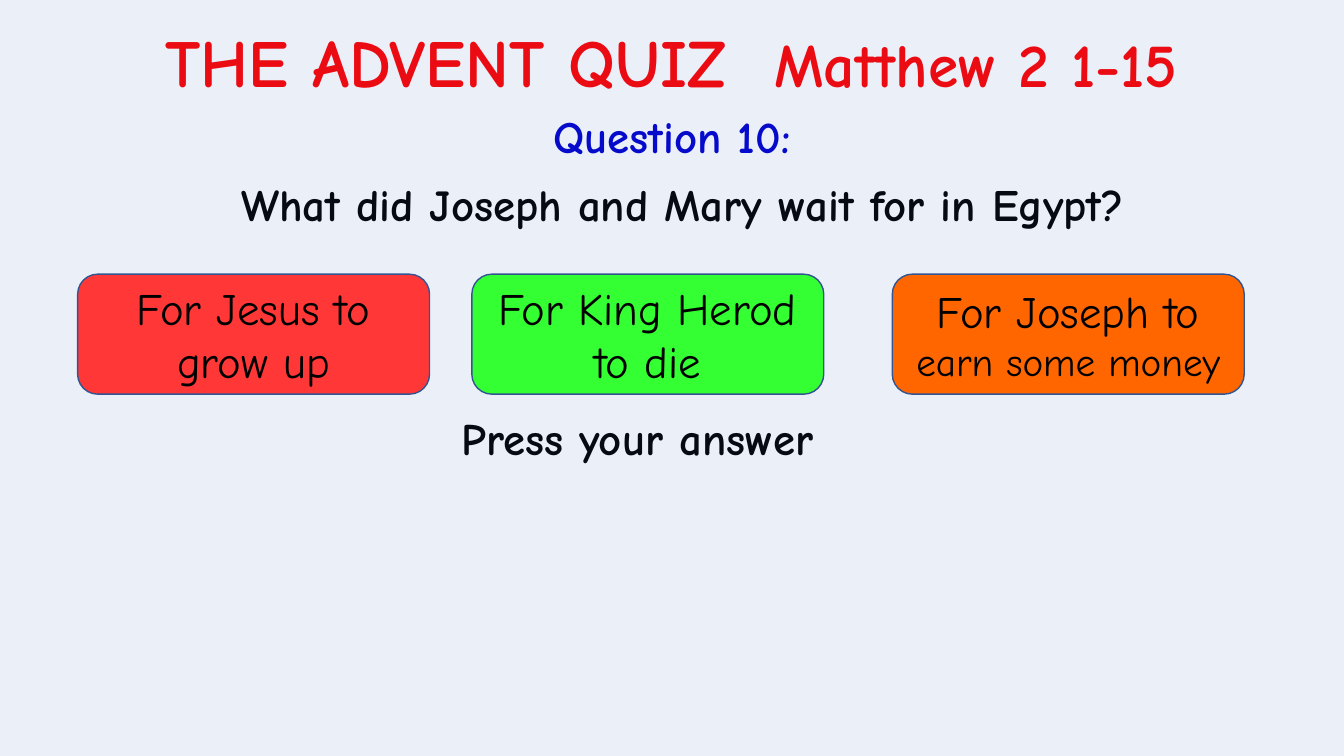
from lxml.etree import SubElement
from pptx import Presentation
from pptx.dml.color import RGBColor
from pptx.enum.shapes import MSO_SHAPE
from pptx.enum.text import MSO_ANCHOR, PP_ALIGN
from pptx.oxml.ns import qn
from pptx.util import Inches, Pt

WIDTH, HEIGHT = 13.33, 7.5
FONT = "Comic Neue"
ANSWER_TOP, ANSWER_WIDTH, ANSWER_HEIGHT = 2.72, 3.49, 1.19
ANSWERS = [
    (0.77, "FF3737", [("For Jesus to grow up", 32)]),
    (4.68, "33FF33", [("For King Herod to die", 32)]),
    (8.85, "FF6600", [("For Joseph to ", 32), ("earn some money", 28)]),
]


def color(value):
    return RGBColor.from_string(value)


def write(frame, pieces, ink="000000", bold=False, **layout):
    """Fill a text frame with one paragraph of (text, size) pieces."""
    frame.word_wrap = True
    para = frame.paragraphs[0]
    for name, value in ({"alignment": PP_ALIGN.CENTER} | layout).items():
        setattr(para, name, value)
    for text, size in pieces:
        span = para.add_run()
        span.text = text
        for name, value in {"name": FONT, "size": Pt(size), "bold": bold}.items():
            setattr(span.font, name, value)
        span.font.color.rgb = color(ink)


def add_line(page, box, pieces, ink="000000", **layout):
    text_box = page.shapes.add_textbox(*map(Inches, box))
    write(text_box.text_frame, pieces, ink, bold=True, **layout)


def add_panel(page, kind, box, fill):
    panel = page.shapes.add_shape(kind, *map(Inches, box))
    panel.shadow.inherit = False
    panel.fill.solid()
    panel.fill.fore_color.rgb = color(fill)
    return panel


def add_wash(page, box):
    """Lay a pale blue tint over the given box."""
    wash = add_panel(page, MSO_SHAPE.RECTANGLE, box, "4472C4")
    wash.line.fill.background()
    tint = wash.fill._xPr.find(".//" + qn("a:srgbClr"))
    SubElement(tint, qn("a:alpha"), val="10000")


def add_answer(page, box, fill, pieces):
    button = add_panel(page, MSO_SHAPE.ROUNDED_RECTANGLE, box, fill)
    button.line.color.rgb = color("325491")
    button.line.width = Pt(1)
    button.text_frame.vertical_anchor = MSO_ANCHOR.MIDDLE
    write(button.text_frame, pieces)


def build_quiz_page(page):
    # Headings
    add_line(page, (0.37, 0.15, 12.58, 0.91),
             [("THE ADVENT QUIZ  ", 48), ("Matthew 2 1-15", 44)], "FF0000")
    add_line(page, (4.46, 1.03, 4.41, 0.64), [("Question 10:", 32)], "0000CC")

    # Question and prompt
    add_line(page, (0.99, 1.74, 11.57, 1.19),
             [("What did Joseph and Mary wait for in Egypt?", 32)],
             line_spacing=Pt(36), space_before=Pt(10))
    add_line(page, (4.48, 4.09, 6.73, 0.72), [("Press your answer", 32)],
             alignment=PP_ALIGN.LEFT, line_spacing=0.9, space_before=Pt(7.5))

    # Tint over the text, then the answer buttons on top
    add_wash(page, (0, 0, WIDTH, HEIGHT))
    for left, fill, pieces in ANSWERS:
        add_answer(page, (left, ANSWER_TOP, ANSWER_WIDTH, ANSWER_HEIGHT), fill, pieces)


def main():
    deck = Presentation()
    deck.slide_width, deck.slide_height = Inches(WIDTH), Inches(HEIGHT)
    build_quiz_page(deck.slides.add_slide(deck.slide_layouts[6]))
    deck.save("out.pptx")


if __name__ == "__main__":
    main()
